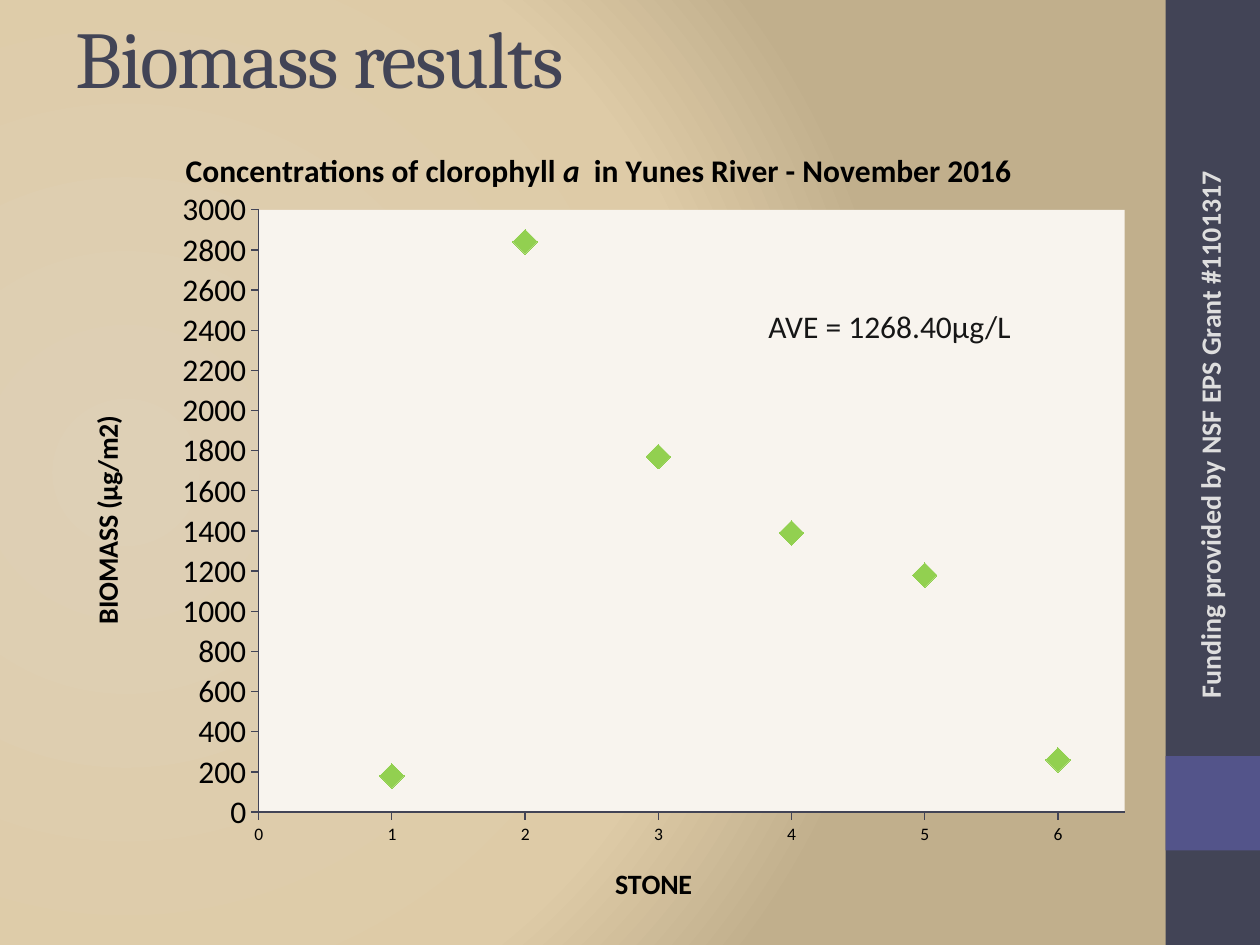
import pptx
import pptx.chart.data
import pptx.dml.color
import pptx.enum.chart
import pptx.enum.shapes
import pptx.enum.text
import pptx.oxml
import pptx.oxml.ns
import pptx.util

RGBColor = pptx.dml.color.RGBColor
NAVY = RGBColor(0x42, 0x44, 0x56)
VIOLET = RGBColor(0x53, 0x54, 0x8A)
PALE = RGBColor(0xDE, 0xDE, 0xDE)
INK = RGBColor(0x16, 0x16, 0x16)
BLACK = RGBColor(0, 0, 0)
GREEN = RGBColor(0x92, 0xD0, 0x50)
CREAM = RGBColor(0xF8, 0xF4, 0xEE)
GLOW = ((0, RGBColor(0xDE, 0xD0, 0xB6)), (75, RGBColor(0xDE, 0xCB, 0xA7)),
        (100, RGBColor(0xC1, 0xAF, 0x8C)))

ENUM = pptx.enum.chart
TEXT = pptx.enum.text
Pt = pptx.util.Pt
qn = pptx.oxml.ns.qn
SPACE = pptx.oxml.ns.nsdecls


class Deck:
    """Holds the style and the current slide, with places as shares of its size."""

    def __init__(self, wide, high):
        self.deck = pptx.Presentation()
        self.deck.slide_width = pptx.util.Inches(wide)
        self.deck.slide_height = pptx.util.Inches(high)
        self.slide = self.deck.slides.add_slide(self.deck.slide_layouts[5])

    def put(self, item, **vals):
        for name, val in vals.items():
            setattr(item, name, val)

    def place(self, box):
        wide, high = self.deck.slide_width, self.deck.slide_height
        return [round(part * side) for part, side in zip(box, (wide, high) * 2)]

    def font(self, font, color, **vals):
        self.put(font, **vals)
        font.color.rgb = color

    def paint(self, stops):
        marks = "".join(
            f'<a:gs pos="{pos * 1000}"><a:srgbClr val="{hue}"/></a:gs>' for pos, hue in stops)
        fill = pptx.oxml.parse_xml(
            f'<a:gradFill {SPACE("a")} rotWithShape="1"><a:gsLst>{marks}</a:gsLst>'
            '<a:path path="circle"><a:fillToRect l="20000" t="50000" r="100000" b="50000"/>'
            '</a:path></a:gradFill>')
        self.slide.background.fill.solid()
        old = self.slide.element.find(".//" + qn("p:bgPr") + "/" + qn("a:solidFill"))
        old.getparent().replace(old, fill)

    def block(self, box, color):
        kind = pptx.enum.shapes.MSO_SHAPE.RECTANGLE
        shape = self.slide.shapes.add_shape(kind, *self.place(box))
        shape.shadow.inherit = False
        shape.fill.solid()
        shape.fill.fore_color.rgb = color
        shape.line.fill.background()

    def title(self, text, box):
        shape = self.slide.shapes.title
        names = ("left", "top", "width", "height")
        self.put(shape, **dict(zip(names, self.place(box))))
        self.say(shape, text, NAVY, TEXT.PP_ALIGN.LEFT, name="Cambria", size=Pt(46))
        run = shape.text_frame.paragraphs[0].runs[0]
        run.font._element.set("spc", "-100")

    def note(self, text, box, color, align, turn=0, **vals):
        shape = self.slide.shapes.add_textbox(*self.place(box))
        shape.rotation = turn
        self.say(shape, text, color, align, name="Calibri", **vals)

    def say(self, shape, text, color, align, **vals):
        frame = shape.text_frame
        self.put(frame, word_wrap=True, vertical_anchor=TEXT.MSO_ANCHOR.MIDDLE,
                 auto_size=TEXT.MSO_AUTO_SIZE.NONE)
        line = frame.paragraphs[0]
        line.alignment = align
        run = line.add_run()
        run.text = text
        self.font(run.font, color, **vals)

    def layout(self, part, after, **vals):
        old = part.find(qn("c:layout"))
        if old is not None:
            part.remove(old)
        marks = "".join(f'<c:{name} val="{val}"/>' for name, val in vals.items())
        new = pptx.oxml.parse_xml(
            f'<c:layout {SPACE("c")}><c:manualLayout>{marks}</c:manualLayout></c:layout>')
        part.insert(after, new)

    def label(self, title, size, *texts):
        line = title.text_frame.paragraphs[0]
        for text, slant in texts:
            run = line.add_run()
            run.text = text
            self.font(run.font, BLACK, name="Calibri", size=Pt(size), bold=True, italic=slant)

    def axis(self, axis, name, size, top, step):
        self.put(axis, has_major_gridlines=False, minimum_scale=0, maximum_scale=top,
                 major_unit=step, major_tick_mark=ENUM.XL_TICK_MARK.OUTSIDE,
                 minor_tick_mark=ENUM.XL_TICK_MARK.NONE)
        self.put(axis.tick_labels, number_format="General", number_format_is_linked=False)
        self.font(axis.tick_labels.font, BLACK, name="Calibri", size=Pt(size))
        axis.format.line.color.rgb = NAVY
        axis.format.line.width = Pt(0.75)
        self.label(axis.axis_title, 16, (name, False))

    def plot(self, box, vals):
        data = pptx.chart.data.XyChartData()
        row = data.add_series("Series 1")
        for stone, mass in enumerate(vals, 1):
            row.add_data_point(stone, mass)
        kind = ENUM.XL_CHART_TYPE.XY_SCATTER
        chart = self.slide.shapes.add_chart(kind, *self.place(box), data).chart
        self.put(chart, has_legend=False, has_title=True)
        self.font(chart.font, BLACK, name="Calibri", size=Pt(10))
        self.label(chart.chart_title, 18, ("Concentrations of clorophyll ", False),
                   ("a", True), ("  in Yunes River - November 2016", False))
        self.axis(chart.category_axis, "STONE", 10, 6.5, 1)
        self.axis(chart.value_axis, "BIOMASS (μg/m2)", 18, 3000, 200)
        chart.plots[0].vary_by_categories = False
        dots = chart.plots[0].series[0]
        dots.smooth = False
        dots.format.line.fill.background()
        self.put(dots.marker, style=ENUM.XL_MARKER_STYLE.DIAMOND, size=14)
        dots.marker.format.fill.solid()
        dots.marker.format.fill.fore_color.rgb = GREEN
        dots.marker.format.line.color.rgb = GREEN
        self.layout(chart.chart_title._element, 1, xMode="edge", yMode="edge", x=0.12, y=0.04)
        side = chart.value_axis.axis_title
        self.layout(side._element, 1, xMode="edge", yMode="edge", x=0.03, y=0.37)
        body = side._element.find(".//" + qn("a:bodyPr"))
        body.set("rot", "-5400000")
        body.set("vert", "horz")
        area = chart._chartSpace.find(".//" + qn("c:plotArea"))
        self.layout(area, 0, layoutTarget="inner", xMode="edge", yMode="edge",
                    x=0.19, y=0.12, w=0.79, h=0.75)
        area.append(pptx.oxml.parse_xml(
            f'<c:spPr {SPACE("c", "a")}><a:solidFill><a:srgbClr val="{CREAM}"/>'
            '</a:solidFill><a:ln><a:noFill/></a:ln></c:spPr>'))


def main():
    deck = Deck(10, 7.5)
    deck.paint(GLOW)
    deck.block((0.925, 0, 0.075, 1), NAVY)
    deck.block((0.925, 0.8, 0.075, 0.1), VIOLET)
    deck.title("Biomass results", (0.05, -0.02, 0.83, 0.16))
    deck.note("Funding provided by NSF EPS Grant #1101317", (0.71, 0.43, 0.5, 0.06),
              PALE, TEXT.PP_ALIGN.CENTER, 270, size=Pt(16), bold=True)
    deck.plot((0.04, 0.12, 0.87, 0.85), (180, 2840, 1770, 1390, 1180, 260))
    deck.note("AVE = 1268.40µg/L", (0.6, 0.32, 0.27, 0.05), INK,
              TEXT.PP_ALIGN.LEFT, size=Pt(18))
    deck.deck.save("out.pptx")


if __name__ == "__main__":
    main()
